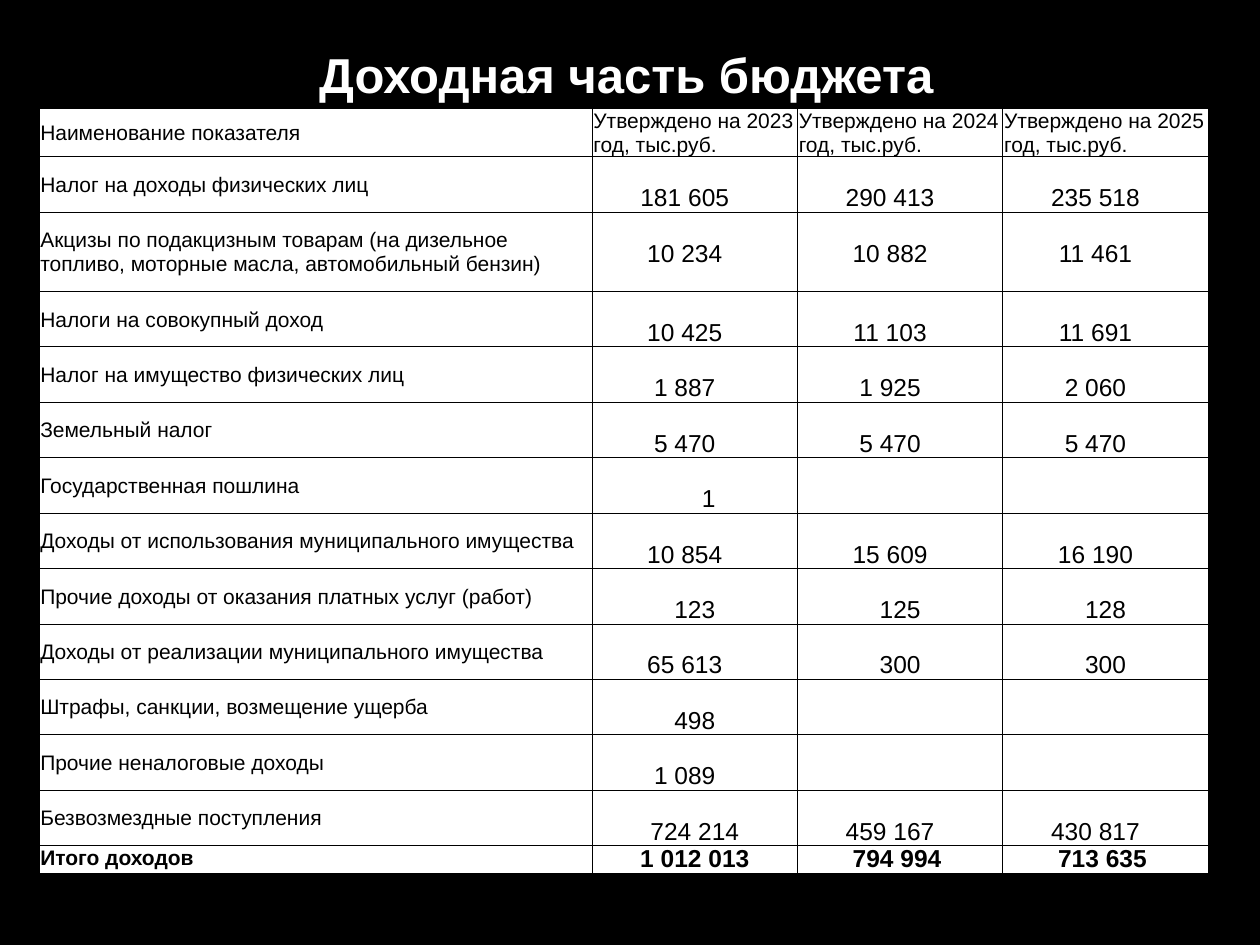
import dataclasses

import pptx
import pptx.dml.color
import pptx.enum.text
import pptx.oxml
import pptx.oxml.ns
import pptx.util

Inches = pptx.util.Inches
Pt = pptx.util.Pt
ALIGN = pptx.enum.text.PP_ALIGN
ANCHOR = pptx.enum.text.MSO_ANCHOR

YEARS = (2023, 2024, 2025)
INCOME = [
    ("Налог на доходы физических лиц", "181 605", "290 413", "235 518"),
    ("Акцизы по подакцизным товарам (на дизельное топливо, моторные масла, "
     "автомобильный бензин)", "10 234", "10 882", "11 461"),
    ("Налоги на совокупный доход", "10 425", "11 103", "11 691"),
    ("Налог на имущество физических лиц", "1 887", "1 925", "2 060"),
    ("Земельный налог", "5 470", "5 470", "5 470"),
    ("Государственная пошлина", "1", "", ""),
    ("Доходы от использования муниципального имущества", "10 854", "15 609", "16 190"),
    ("Прочие доходы от оказания платных услуг (работ)", "123", "125", "128"),
    ("Доходы от реализации муниципального имущества", "65 613", "300", "300"),
    ("Штрафы, санкции, возмещение ущерба", "498", "", ""),
    ("Прочие неналоговые доходы", "1 089", "", ""),
    ("Безвозмездные поступления", "724 214", "459 167", "430 817"),
]
TOTAL = ("Итого доходов", "1 012 013", "794 994", "713 635")

COLUMN_WIDTHS = [4.39] + [1.63] * len(YEARS)
HEADER_HEIGHT, INCOME_HEIGHT, EXCISE_HEIGHT, TOTAL_HEIGHT = 0.38, 0.44, 0.63, 0.22
EXCISE = 1
INSET = 0.01
AMOUNT_DROP = 0.22
AMOUNT_SHIFTS = {"1": -0.22, "724 214": 0, "1 012 013": 0, "794 994": 0.05, "713 635": 0.05}


@dataclasses.dataclass
class Theme:
    """Colours, font and type sizes of the slide."""
    background: str = "000000"
    title: str = "FFFFFF"
    cell: str = "FFFFFF"
    ink: str = "000000"
    border: str = "000000"
    font: str = "Arial"
    title_size: int = 28
    label_size: int = 12
    amount_size: int = 14
    border_width: float = 0.5


class BudgetSlide:
    """Draws the elements of one slide in a given theme."""

    def __init__(self, presentation, theme):
        self.theme = theme
        self.slide = presentation.slides.add_slide(presentation.slide_layouts[5])
        self.paint(self.slide.background.fill, theme.background)

    def paint(self, fill, colour):
        """Make a fill solid."""
        fill.solid()
        fill.fore_color.rgb = pptx.dml.color.RGBColor.from_string(colour)

    def style(self, paragraph, size, colour, bold, align):
        """Format a paragraph and its runs."""
        paragraph.alignment = align
        for run in paragraph.runs:
            run.font.name = self.theme.font
            run.font.size = Pt(size)
            run.font.bold = bold
            run.font.color.rgb = pptx.dml.color.RGBColor.from_string(colour)

    def title(self, text, left, top, width, height):
        """Fill and place the title placeholder."""
        heading = self.slide.shapes.title
        heading.left, heading.top = Inches(left), Inches(top)
        heading.width, heading.height = Inches(width), Inches(height)
        heading.text_frame.text = text
        heading.text_frame.vertical_anchor = ANCHOR.MIDDLE
        self.style(heading.text_frame.paragraphs[0], self.theme.title_size,
                   self.theme.title, True, ALIGN.CENTER)

    def table(self, left, top, widths, heights):
        """Add an empty table with the given column widths and row heights."""
        table = self.slide.shapes.add_table(
            len(heights), len(widths), Inches(left), Inches(top),
            Inches(sum(widths)), Inches(sum(heights))).table
        table.first_row = table.horz_banding = False
        for column, width in zip(table.columns, widths):
            column.width = Inches(width)
        for row, height in zip(table.rows, heights):
            row.height = Inches(height)
        return table

    def border(self, cell):
        """Draw all four borders of a cell."""
        properties = cell._tc.get_or_add_tcPr()
        for side in ("lnL", "lnR", "lnT", "lnB"):
            properties.append(pptx.oxml.parse_xml(
                f'<a:{side} {pptx.oxml.ns.nsdecls("a")} w="{Pt(self.theme.border_width)}">'
                f'<a:solidFill><a:srgbClr val="{self.theme.border}"/></a:solidFill>'
                f'</a:{side}>'))

    def cell(self, cell, text, size, bold, align, anchor):
        """Write and format a bordered cell."""
        self.border(cell)
        self.paint(cell.fill, self.theme.cell)
        cell.margin_left = cell.margin_right = cell.margin_top = Inches(INSET)
        cell.margin_bottom = 0
        cell.vertical_anchor = anchor
        cell.text_frame.text = text
        self.style(cell.text_frame.paragraphs[0], size, self.theme.ink, bold, align)

    def label(self, cell, text, bold=False, anchor=ANCHOR.MIDDLE):
        """Write a left-aligned name."""
        self.cell(cell, text, self.theme.label_size, bold, ALIGN.LEFT, anchor)

    def amount(self, cell, text, drop=0, bold=False):
        """Write a centred amount, lowered and shifted by the cell margins."""
        self.cell(cell, text, self.theme.amount_size, bold, ALIGN.CENTER, ANCHOR.TOP)
        shift = AMOUNT_SHIFTS.get(text, 0 if len(text) <= 3 else 0.16)
        cell.margin_top = Inches(drop)
        cell.margin_left = Inches(INSET + max(-shift, 0))
        cell.margin_right = Inches(INSET + max(shift, 0))


def main():
    """Build the budget income slide."""
    presentation = pptx.Presentation()
    presentation.slide_width, presentation.slide_height = Inches(10), Inches(7.5)
    page = BudgetSlide(presentation, Theme())
    page.title("Доходная часть бюджета", 0.47, 0.23, 9, 0.72)

    heights = [HEADER_HEIGHT] + [INCOME_HEIGHT] * len(INCOME) + [TOTAL_HEIGHT]
    heights[1 + EXCISE] = EXCISE_HEIGHT
    budget = page.table(0.31, 0.86, COLUMN_WIDTHS, heights)

    headings = ["Наименование показателя"]
    headings += [f"Утверждено на {year} год, тыс.руб." for year in YEARS]
    for column, heading in enumerate(headings):
        page.label(budget.cell(0, column), heading)
    for row, (source, *amounts) in enumerate(INCOME, start=1):
        page.label(budget.cell(row, 0), source)
        for column, amount in enumerate(amounts, start=1):
            page.amount(budget.cell(row, column), amount, AMOUNT_DROP if amount else 0)
    total_row = len(INCOME) + 1
    page.label(budget.cell(total_row, 0), TOTAL[0], True, ANCHOR.TOP)
    for column, amount in enumerate(TOTAL[1:], start=1):
        page.amount(budget.cell(total_row, column), amount, bold=True)

    presentation.save("out.pptx")


if __name__ == "__main__":
    main()
